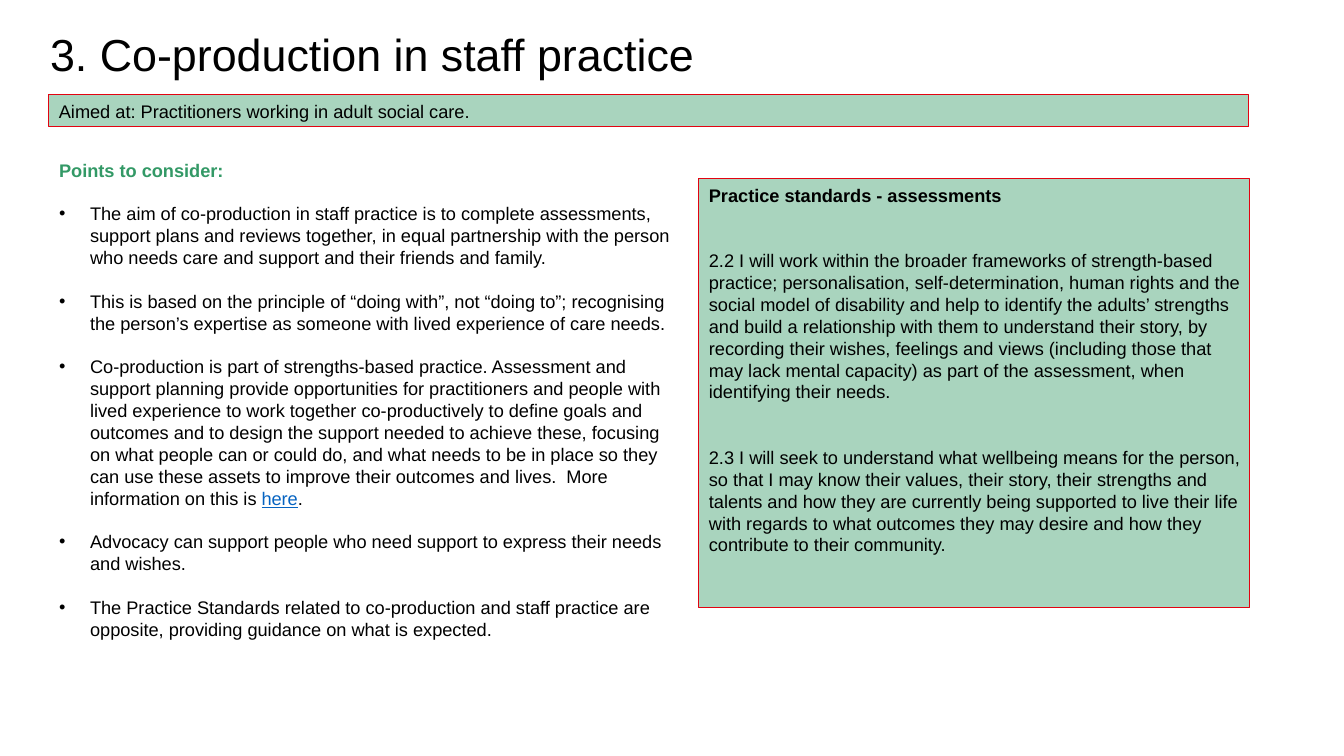
from lxml import etree
from pptx import Presentation, util as u
from pptx.dml.color import RGBColor
from pptx.enum import shapes, text
from pptx.oxml.ns import qn

PX = u.Inches(7.5) / 756
FONT = "Arial"
BLACK, GREEN, RED, LINK = "000000", "339966", "E30311", "0563C1"
BODY_SIZE, LINE_PITCH = 13, 15.6
INDENT = 31

TITLE = "3. Co-production in staff practice"
AUDIENCE = "Aimed at: Practitioners working in adult social care."
POINTS_HEADING = "Points to consider:"
POINTS = [
    "The aim of co-production in staff practice is to complete assessments, support plans and reviews together, "
    "in equal partnership with the person who needs care and support and their friends and family.",
    "This is based on the principle of “doing with”, not “doing to”; recognising the person’s expertise as "
    "someone with lived experience of care needs.",
    "Co-production is part of strengths-based practice. Assessment and support planning provide opportunities "
    "for practitioners and people with lived experience to work together co-productively to define goals and "
    "outcomes and to design the support needed to achieve these, focusing on what people can or could do, and "
    "what needs to be in place so they can use these assets to improve their outcomes and lives.  More "
    "information on this is |here|.",
    "Advocacy can support people who need support to express their needs and wishes.",
    "The Practice Standards related to co-production and staff practice are opposite, providing guidance on "
    "what is expected.",
]
STANDARDS_HEADING = "Practice standards - assessments"
STANDARDS = [
    "2.2 I will work within the broader frameworks of strength-based practice; personalisation, "
    "self-determination, human rights and the social model of disability and help to identify the adults’ "
    "strengths and build a relationship with them to understand their story, by recording their wishes, "
    "feelings and views (including those that may lack mental capacity) as part of the assessment, when "
    "identifying their needs.",
    "2.3 I will seek to understand what wellbeing means for the person, so that I may know their values, their "
    "story, their strengths and talents and how they are currently being supported to live their life with "
    "regards to what outcomes they may desire and how they contribute to their community.",
]


def px(length):
    return round(length * PX)


def color(value):
    return RGBColor.from_string(value)


def place(shape, box):
    shape.left, shape.top, shape.width, shape.height = map(px, box)


def prepare_frame(shape, anchor):
    frame = shape.text_frame
    frame.word_wrap = True
    frame.auto_size = text.MSO_AUTO_SIZE.NONE
    frame.vertical_anchor = anchor
    return frame


def set_bullet(paragraph, character=None):
    """Give the paragraph a hanging bullet, or none without a character."""
    properties = paragraph._p.get_or_add_pPr()
    indent = px(INDENT) if character else 0
    properties.set("marL", str(indent))
    properties.set("indent", str(-indent))
    if character:
        etree.SubElement(properties, qn("a:buFont"), typeface=FONT)
        etree.SubElement(properties, qn("a:buChar"), char=character)
    else:
        etree.SubElement(properties, qn("a:buNone"))


def format_runs(paragraph, size=BODY_SIZE, fill=BLACK, bold=False):
    paragraph.alignment = text.PP_ALIGN.LEFT
    for run in paragraph.runs:
        run.font.name, run.font.size, run.font.bold = FONT, u.Pt(size), bold
        run.font.color.rgb = color(fill)


def write_section(frame, heading, heading_color, items, gap_lines, bullet=None):
    """Write a bold heading, then items separated by a number of line heights."""
    for index, item in enumerate([heading, *items]):
        paragraph = frame.paragraphs[0] if index == 0 else frame.add_paragraph()
        paragraph.space_before = u.Pt(gap_lines * LINE_PITCH if index else 0)
        paragraph.space_after = u.Pt(0)
        set_bullet(paragraph, bullet if index else None)
        parts = item.split("|")
        for part in parts:
            paragraph.add_run().text = part
        if index == 0:
            format_runs(paragraph, fill=heading_color, bold=True)
        else:
            format_runs(paragraph)
        if len(parts) > 1:
            link = paragraph.runs[1].font
            link.underline = True
            link.color.rgb = color(LINK)


def add_panel(slide, box, anchor):
    """Add a translucent green rectangle and return its text frame."""
    panel = slide.shapes.add_shape(shapes.MSO_SHAPE.RECTANGLE, *map(px, box))
    panel.shadow.inherit = False
    panel.fill.solid()
    panel.fill.fore_color.rgb = color(GREEN)
    solid = panel._element.spPr.find(qn("a:solidFill"))
    etree.SubElement(solid[0], qn("a:alpha"), val="42000")
    panel.line.color.rgb = color(RED)
    panel.line.width = u.Pt(0.75)
    return prepare_frame(panel, anchor)


def add_title(slide, box):
    title = slide.shapes.title
    place(title, box)
    frame = prepare_frame(title, text.MSO_ANCHOR.MIDDLE)
    frame.text = TITLE
    format_runs(frame.paragraphs[0], size=32)


def add_points(slide, box):
    body = slide.placeholders[1]
    place(body, box)
    frame = prepare_frame(body, text.MSO_ANCHOR.TOP)
    write_section(frame, POINTS_HEADING, GREEN, POINTS, gap_lines=1, bullet="•")


def add_standards(slide, box):
    frame = add_panel(slide, box, text.MSO_ANCHOR.TOP)
    write_section(frame, STANDARDS_HEADING, BLACK, STANDARDS, gap_lines=2)


def add_audience(slide, box):
    frame = add_panel(slide, box, text.MSO_ANCHOR.MIDDLE)
    frame.text = AUDIENCE
    format_runs(frame.paragraphs[0])


def main():
    presentation = Presentation()
    presentation.slide_width, presentation.slide_height = px(1344), px(756)
    slide = presentation.slides.add_slide(presentation.slide_layouts[1])
    add_title(slide, (40, 21, 1283, 65))
    add_points(slide, (49, 154, 640, 531))
    add_standards(slide, (699, 179, 551, 429))
    add_audience(slide, (49, 95, 1200, 32))
    presentation.save("out.pptx")


if __name__ == "__main__":
    main()
